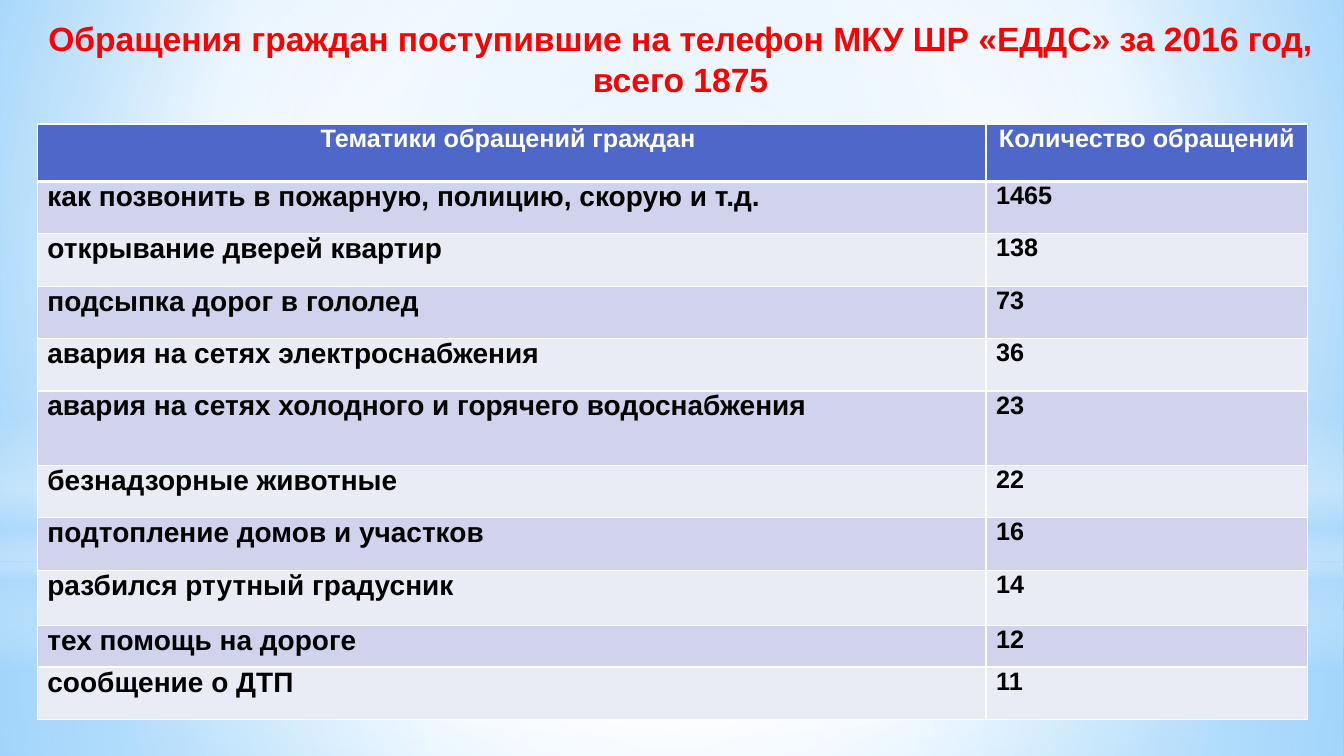
import dataclasses

import lxml.etree
import pptx
import pptx.dml.color
import pptx.enum.shapes
import pptx.enum.text
import pptx.oxml.ns
import pptx.util

Inches = pptx.util.Inches
ALIGN = pptx.enum.text.PP_ALIGN
SHAPE = pptx.enum.shapes.MSO_SHAPE
qn = pptx.oxml.ns.qn


@dataclasses.dataclass(frozen=True)
class Theme:
    font: str = "Arial"
    title_color: str = "FF0000"
    header_fill: str = "4E67C8"
    band_fills: tuple = ("D0D3EB", "E9EBF5")
    white: str = "FFFFFF"
    black: str = "000000"
    haze: str = "B4DCFA"
    sky: str = "9ED5FF"
    deep_sky: str = "5BB9FF"
    title_size: int = 24
    topic_size: int = 20
    count_size: int = 18
    thin_border: int = 1
    header_border: int = 3


def rgb(color):
    return pptx.dml.color.RGBColor.from_string(color)


def write_text(frame, text, *, font, size, color, align, line_spacing=1.0, space_before=0):
    frame.word_wrap = True
    paragraph = frame.paragraphs[0]
    paragraph.alignment = align
    paragraph.line_spacing = line_spacing
    paragraph.space_before = pptx.util.Pt(space_before)
    run = paragraph.add_run()
    run.text = text
    run.font.name = font
    run.font.size = pptx.util.Pt(size)
    run.font.bold = True
    run.font.color.rgb = rgb(color)


def add_child(parent, tag, **attributes):
    child = lxml.etree.SubElement(parent, qn(tag))
    for name, value in attributes.items():
        child.set(name, str(value))
    return child


def set_gradient(owner, stops, focus=None, angle=0):
    """Stops are (position %, color, opacity %); focus is left, top, right, bottom %."""
    gradient = next(owner.iter(qn("a:gradFill")))
    for child in list(gradient):
        gradient.remove(child)
    stop_list = add_child(gradient, "a:gsLst")
    for position, color, opacity in stops:
        stop = add_child(stop_list, "a:gs", pos=position * 1000)
        swatch = add_child(stop, "a:srgbClr", val=color)
        if opacity < 100:
            add_child(swatch, "a:alpha", val=opacity * 1000)
    if focus:
        circle = add_child(gradient, "a:path", path="circle")
        sides = {side: share * 1000 for side, share in zip("ltrb", focus)}
        add_child(circle, "a:fillToRect", **sides)
    else:
        add_child(gradient, "a:lin", ang=angle * 60000, scaled=0)


def set_borders(cell, color, widths):
    properties = cell._tc.get_or_add_tcPr()
    for index, (side, width) in enumerate(widths.items()):
        line = add_child(properties, f"a:ln{side}", w=pptx.util.Pt(width))
        add_child(add_child(line, "a:solidFill"), "a:srgbClr", val=color)
        properties.insert(index, line)


class SlideBuilder:
    def __init__(self, presentation, theme):
        self.theme = theme
        self.slide = presentation.slides.add_slide(presentation.slide_layouts[5])

    def background(self, stops, focus):
        self.slide.background.fill.gradient()
        set_gradient(self.slide.element, stops, focus)

    def glow(self, preset, top, height, stops, **direction):
        glow = self.slide.shapes.add_shape(
            preset, Inches(0), Inches(top), Inches(13.33), Inches(height))
        glow.shadow.inherit = False
        glow.line.fill.background()
        glow.fill.gradient()
        set_gradient(glow.element, stops, **direction)

    def title(self, text, left, top, width, height):
        title = self.slide.shapes.title
        title.left, title.top = Inches(left), Inches(top)
        title.width, title.height = Inches(width), Inches(height)
        frame = title.text_frame
        frame.auto_size = pptx.enum.text.MSO_AUTO_SIZE.NONE
        frame.vertical_anchor = pptx.enum.text.MSO_ANCHOR.TOP
        write_text(frame, text, font=self.theme.font, size=self.theme.title_size,
                   color=self.theme.title_color, align=ALIGN.CENTER)
        # Bring the title in front of the glows
        title.element.getparent().append(title.element)

    def table(self, rows, left, top, column_widths, row_heights):
        theme = self.theme
        table = self.slide.shapes.add_table(
            len(rows), len(column_widths), Inches(left), Inches(top),
            Inches(sum(column_widths)), Inches(sum(row_heights))).table
        for column, width in zip(table.columns, column_widths):
            column.width = Inches(width)
        for row_index, (values, height) in enumerate(zip(rows, row_heights)):
            table.rows[row_index].height = Inches(height)
            is_header = row_index == 0
            fill = theme.header_fill if is_header else theme.band_fills[(row_index - 1) % 2]
            borders = dict.fromkeys("LRTB", theme.thin_border)
            if is_header:
                borders["B"] = theme.header_border
            elif row_index == 1:
                borders["T"] = theme.header_border
            for column_index, value in enumerate(values):
                cell = table.cell(row_index, column_index)
                cell.fill.solid()
                cell.fill.fore_color.rgb = rgb(fill)
                set_borders(cell, theme.white, borders)
                is_topic = column_index == 0 and not is_header
                size = theme.topic_size if is_topic else theme.count_size
                write_text(cell.text_frame, value, font=theme.font, size=size,
                           color=theme.white if is_header else theme.black,
                           align=ALIGN.CENTER if is_header else ALIGN.LEFT,
                           line_spacing=0.8, space_before=size * 0.2)


def main():
    presentation = pptx.Presentation()
    presentation.slide_width = Inches(13.33)
    presentation.slide_height = Inches(7.5)
    theme = Theme()
    builder = SlideBuilder(presentation, theme)
    white, haze = theme.white, theme.haze
    center = (50, 50, 50, 50)

    # Sky background and its soft glows
    builder.background(
        [(0, theme.sky, 100), (60, white, 100), (100, theme.deep_sky, 100)], (20, 10, 20, 60))
    builder.glow(SHAPE.RECTANGLE, 5.58, 1.92,
                 [(0, white, 91), (37, white, 76), (100, haze, 79)], focus=center)
    builder.glow(SHAPE.RECTANGLE, 0, 5.58,
                 [(0, white, 89), (48, white, 62), (100, haze, 79)], focus=center)
    builder.glow(SHAPE.RECTANGLE, 4.12, 2.5,
                 [(0, white, 0), (29, white, 30), (45, haze, 40),
                  (55, white, 26), (65, haze, 60), (100, white, 0)], angle=90)
    builder.glow(SHAPE.OVAL, 1.75, 5.58, [(0, white, 100), (56, white, 0)], focus=center)

    # Title
    builder.title("Обращения граждан поступившие на телефон МКУ ШР «ЕДДС» за 2016 год, всего 1875",
                  0.37, 0.13, 12.76, 0.94)

    # Table of requests by topic
    requests = [
        ("Тематики обращений граждан ", "Количество обращений"),
        ("как позвонить в пожарную, полицию, скорую и т.д.", "1465"),
        ("открывание дверей квартир", "138"),
        ("подсыпка дорог в гололед", "73"),
        ("авария на сетях электроснабжения", "36"),
        ("авария на сетях холодного и горячего водоснабжения", "23"),
        ("безнадзорные животные", "22"),
        ("подтопление домов и участков", "16"),
        ("разбился ртутный градусник", "14"),
        ("тех помощь на дороге", "12"),
        ("сообщение о ДТП", "11"),
    ]
    row_heights = [0.57] + [0.52] * 4 + [0.74] + [0.52] * 2 + [0.55, 0.41, 0.52]
    builder.table(requests, 0.37, 1.23, [9.41, 3.19], row_heights)

    presentation.save("out.pptx")


if __name__ == "__main__":
    main()
